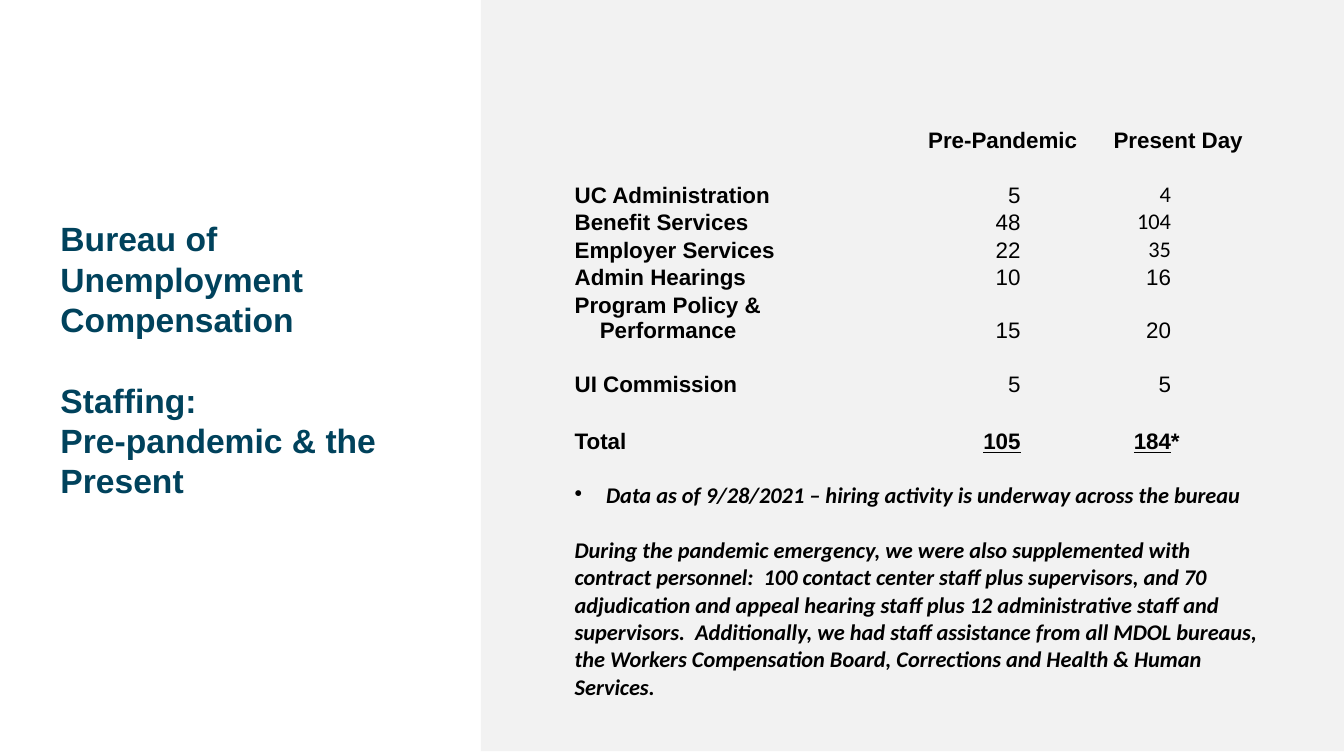
from dataclasses import dataclass
from typing import Any

from lxml.etree import SubElement
from pptx import Presentation
from pptx.dml.color import RGBColor
from pptx.enum.shapes import MSO_SHAPE
from pptx.enum.text import MSO_ANCHOR, MSO_AUTO_SIZE, PP_ALIGN
from pptx.oxml.ns import qn
from pptx.util import Pt


@dataclass(frozen=True)
class Theme:
    """Colours, fonts and type sizes of the slide."""
    heading: RGBColor = RGBColor(0x00, 0x42, 0x5C)
    ink: RGBColor = RGBColor(0x00, 0x00, 0x00)
    panel: RGBColor = RGBColor(0xF2, 0xF2, 0xF2)
    main_font: str = "Arial"
    note_font: str = "Calibri"
    title_size: float = 24
    title_line: float = 28.8
    text_size: float = 16
    text_line: float = 19.5
    plain_table: str = "{2D5ABB26-0587-4C30-8999-92F81FD0307C}"


@dataclass
class StaffingPage:
    """Draws the elements of one slide in the given theme."""
    page: Any
    theme: Theme

    def style(self, para, size, color, font, **flags):
        for span in para.runs:
            span.font.size = Pt(size)
            span.font.color.rgb = color
            span.font.name = font
            for name, value in flags.items():
                setattr(span.font, name, value)

    def indent(self, para, left, first=0, bullet=None):
        properties = para._p.get_or_add_pPr()
        properties.set("marL", str(Pt(left)))
        properties.set("indent", str(Pt(first)))
        if bullet:
            SubElement(properties, qn("a:buChar")).set("char", bullet)

    def panel(self, left, top, width, height):
        shape = self.page.shapes.add_shape(
            MSO_SHAPE.RECTANGLE, Pt(left), Pt(top), Pt(width), Pt(height))
        shape.shadow.inherit = False
        shape.fill.solid()
        shape.fill.fore_color.rgb = self.theme.panel
        shape.line.fill.background()

    def title(self, text, left, top, width, height):
        box = self.page.shapes.title
        box.left, box.top, box.width, box.height = map(Pt, (left, top, width, height))
        frame = box.text_frame
        frame.text = text
        frame.word_wrap = True
        frame.auto_size = MSO_AUTO_SIZE.NONE
        frame.vertical_anchor = MSO_ANCHOR.BOTTOM
        frame.margin_left = frame.margin_right = 0
        frame.margin_top = frame.margin_bottom = 0
        for para in frame.paragraphs:
            para.alignment = PP_ALIGN.LEFT
            para.line_spacing = Pt(self.theme.title_line)
            self.style(para, self.theme.title_size, self.theme.heading,
                       self.theme.main_font, bold=True)
        return frame

    def table(self, left, top, widths, heights):
        frame = self.page.shapes.add_table(
            len(heights), len(widths), Pt(left), Pt(top), Pt(sum(widths)), Pt(sum(heights)))
        for style_id in frame.element.iter(qn("a:tableStyleId")):
            style_id.text = self.theme.plain_table
        table = frame.table
        table.first_row = table.horz_banding = False
        for column, width in zip(table.columns, widths):
            column.width = Pt(width)
        for row, height in zip(table.rows, heights):
            row.height = Pt(height)
        for cell in table.iter_cells():
            cell.fill.background()
            cell.vertical_anchor = MSO_ANCHOR.BOTTOM
            cell.margin_left = cell.margin_right = 0
            cell.margin_top = cell.margin_bottom = 0
            ending = SubElement(cell.text_frame.paragraphs[0]._p, qn("a:endParaRPr"))
            ending.set("sz", str(self.theme.text_size * 100))
        return table

    def cell(self, table, row, column, text, last=None, align=PP_ALIGN.LEFT,
             font=None, **flags):
        cell = table.cell(row, column)
        if last:
            cell.merge(table.cell(row, last))
        cell.text_frame.text = text
        for para in cell.text_frame.paragraphs:
            para.alignment = align
            self.style(para, self.theme.text_size, self.theme.ink,
                       font or self.theme.main_font, **flags)
        return cell


def main():
    """Build the staffing slide and save it."""
    deck = Presentation()
    deck.slide_width, deck.slide_height = Pt(960), Pt(540)
    theme = Theme()
    page = StaffingPage(deck.slides.add_slide(deck.slide_layouts[5]), theme)

    page.panel(343.5, -3.5, 616.5, 540)
    heading = page.title(
        "Bureau of Unemployment Compensation\nStaffing:\nPre-pandemic & the Present",
        43.2, 153.5, 273, 204)
    heading.paragraphs[1].space_before = Pt(theme.title_line)

    line = theme.text_line
    table = page.table(364.5, 90, [46, 153.5, 51, 48, 66, 66.5, 41, 66],
                       [line] * 6 + [37.5, 39, line, 21, 176.5, line, line])
    for row, first in ((0, 2), (1, 2), (6, 2), (8, 1), (11, 2), (12, 2)):
        table.cell(row, first).merge(table.cell(row, first + 1))
    page.cell(table, 0, 4, "Pre-Pandemic", last=5, bold=True)
    page.cell(table, 0, 6, "Present Day", last=7, bold=True)

    staffing = [
        (2, "UC Administration", 3, "5", "4", theme.note_font),
        (3, "Benefit Services", 3, "48", "104", theme.note_font),
        (4, "Employer Services", 3, "22", "35", theme.note_font),
        (5, "Admin Hearings", 3, "10", "16", theme.main_font),
        (6, "Program Policy & Performance", None, "15", "20", theme.main_font),
        (7, "UI Commission", 3, "5", "5", theme.main_font),
        (9, "Total", 2, "105", "184", theme.main_font),
    ]
    for row, unit, last, before, present, font in staffing:
        total = unit == "Total"
        label = page.cell(table, row, 1, unit, last=last, bold=True)
        page.indent(label.text_frame.paragraphs[0], 18, -18)
        page.cell(table, row, 4, before, align=PP_ALIGN.RIGHT, bold=total, underline=total)
        page.cell(table, row, 6, present, align=PP_ALIGN.RIGHT, font=font,
                  bold=total, underline=total)
    page.cell(table, 9, 7, "*", bold=True)

    notes = page.cell(
        table, 10, 1,
        "Data as of 9/28/2021 – hiring activity is underway across the bureau\n"
        "During the pandemic emergency, we were also supplemented with contract personnel:  "
        "100 contact center staff plus supervisors, and 70 adjudication and appeal hearing "
        "staff plus 12 administrative staff and supervisors.  Additionally, we had staff "
        "assistance from all MDOL bureaus, the Workers Compensation Board, Corrections and "
        "Health & Human Services.",
        last=7, font=theme.note_font, bold=True, italic=True)
    notes.vertical_anchor = MSO_ANCHOR.TOP
    notes.margin_top = Pt(20)
    as_of, support = notes.text_frame.paragraphs
    page.indent(as_of, 22.5, -22.5, "•")
    support.space_before = Pt(line)

    deck.save("out.pptx")


if __name__ == "__main__":
    main()
